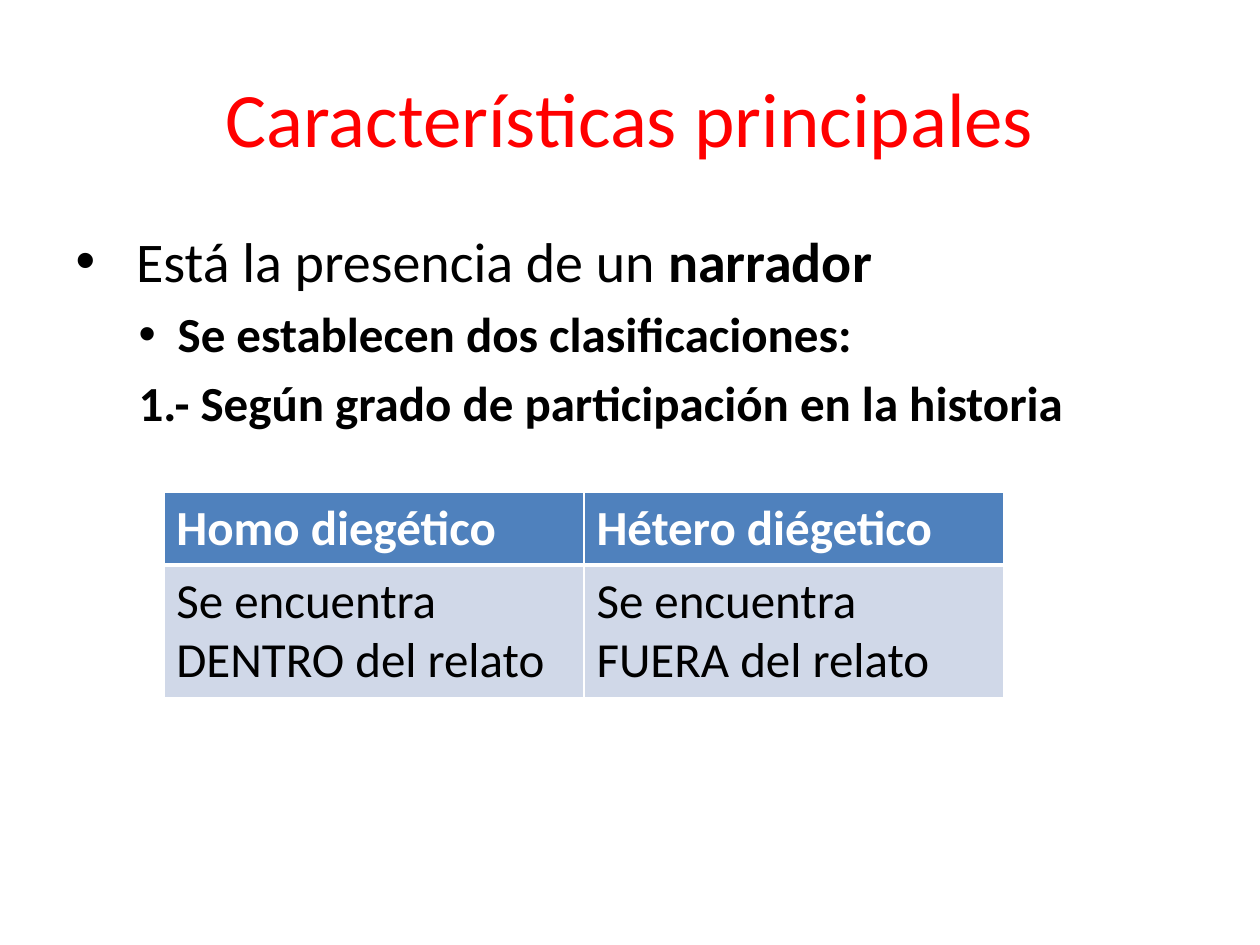
import pptx
import pptx.dml.color
import pptx.enum.text
import pptx.oxml
import pptx.oxml.ns
import pptx.util
import lxml.etree

Inches = pptx.util.Inches
RGBColor = pptx.dml.color.RGBColor

RED = RGBColor(0xFF, 0x00, 0x00)
BLACK = RGBColor(0x00, 0x00, 0x00)
WHITE = RGBColor(0xFF, 0xFF, 0xFF)
BLUE = RGBColor(0x4F, 0x81, 0xBD)
PALE_BLUE = RGBColor(0xD0, 0xD8, 0xE8)
FONT = "Calibri"

TABLE_ROWS = [
    ["Homo diegético", "Hétero diégetico"],
    ["Se encuentra DENTRO del relato", "Se encuentra FUERA del relato"],
]
ROW_HEIGHTS = [0.57, 1.03]


def add_text(para, text, size=28, color=BLACK, bold=False):
    span = para.add_run()
    span.text = text
    span.font.name = FONT
    span.font.size = pptx.util.Pt(size)
    span.font.color.rgb = color
    span.font.bold = bold


def place(shape, left, top, width, height):
    shape.left, shape.top = Inches(left), Inches(top)
    shape.width, shape.height = Inches(width), Inches(height)


def format_item(para, level, left, indent, bullet=None):
    para.level = level
    props = para._p.get_or_add_pPr()
    props.set("marL", str(Inches(left)))
    props.set("indent", str(Inches(indent)))
    tag = "a:buChar" if bullet else "a:buNone"
    mark = lxml.etree.SubElement(props, pptx.oxml.ns.qn(tag))
    if bullet:
        mark.set("char", bullet)


def add_title(page):
    title = page.shapes.title
    place(title, 0.5, 0.3, 9, 1.25)
    title.text_frame.vertical_anchor = pptx.enum.text.MSO_ANCHOR.MIDDLE
    para = title.text_frame.paragraphs[0]
    para.alignment = pptx.enum.text.PP_ALIGN.CENTER
    add_text(para, "Características principales", size=44, color=RED)


def add_list(page):
    body = page.placeholders[1]
    place(body, 0.5, 1.75, 9, 4.95)
    frame = body.text_frame

    para = frame.paragraphs[0]
    format_item(para, 0, 0.38, -0.38, "•")
    add_text(para, " Está la presencia de un ", size=32)
    add_text(para, "narrador", size=32, bold=True)

    para = frame.add_paragraph()
    format_item(para, 1, 0.81, -0.31, "•")
    add_text(para, "Se establecen dos clasificaciones:", bold=True)

    para = frame.add_paragraph()
    format_item(para, 1, 1.06, -0.56)
    add_text(para, "1.- Según grado de participación en la historia", bold=True)


def set_border(cell, side, width):
    line = lxml.etree.SubElement(
        cell._tc.get_or_add_tcPr(), pptx.oxml.ns.qn(f"a:ln{side}"))
    line.set("w", str(pptx.util.Pt(width)))
    fill = lxml.etree.SubElement(line, pptx.oxml.ns.qn("a:solidFill"))
    color = lxml.etree.SubElement(fill, pptx.oxml.ns.qn("a:srgbClr"))
    color.set("val", str(WHITE))


def add_comparison_table(page):
    frame = page.shapes.add_table(
        2, 2, Inches(1.3), Inches(3.91), Inches(6.67), Inches(sum(ROW_HEIGHTS)))
    table = frame.table
    for row, texts in enumerate(TABLE_ROWS):
        table.rows[row].height = Inches(ROW_HEIGHTS[row])
        header = row == 0
        for column, text in enumerate(texts):
            cell = table.cell(row, column)
            # A thick rule separates the header from the body
            for side in "LRTB":
                thick = side == ("B" if header else "T")
                set_border(cell, side, 3 if thick else 1)
            cell.fill.solid()
            cell.fill.fore_color.rgb = BLUE if header else PALE_BLUE
            add_text(cell.text_frame.paragraphs[0], text,
                     color=WHITE if header else BLACK, bold=header)


def main():
    deck = pptx.Presentation()
    deck.slide_width, deck.slide_height = Inches(10), Inches(7.5)
    page = deck.slides.add_slide(deck.slide_layouts[1])
    add_title(page)
    add_list(page)
    add_comparison_table(page)
    deck.save("out.pptx")


if __name__ == "__main__":
    main()
